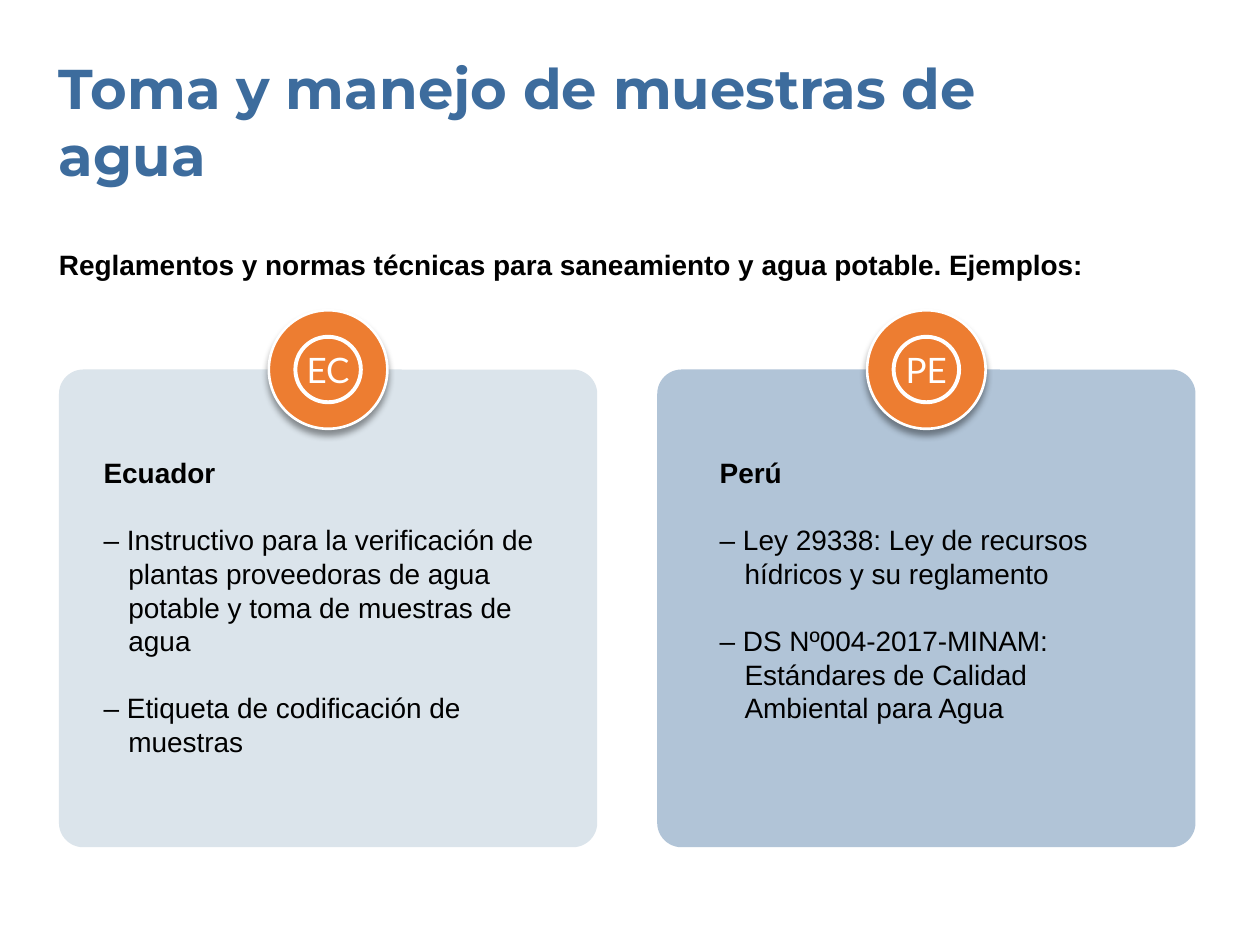
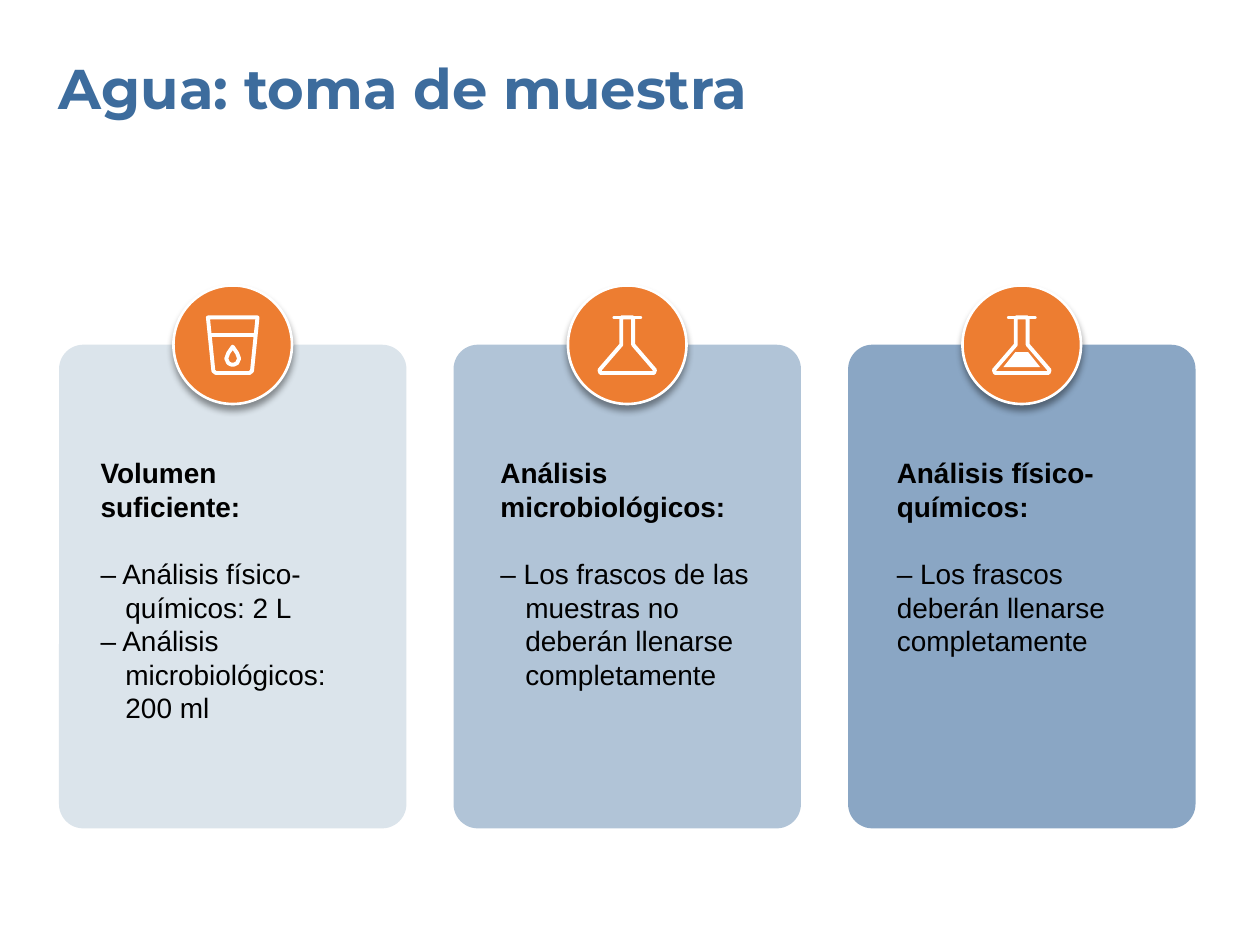
from dataclasses import dataclass

from lxml import etree
from pptx import Presentation
from pptx.dml.color import RGBColor
from pptx.enum.shapes import MSO_CONNECTOR, MSO_SHAPE
from pptx.enum.text import MSO_ANCHOR, PP_ALIGN
from pptx.oxml.ns import qn
from pptx.util import Cm, Pt

ROUNDED, OVAL = MSO_SHAPE.ROUNDED_RECTANGLE, MSO_SHAPE.OVAL
STRAIGHT = MSO_CONNECTOR.STRAIGHT
TOP, MIDDLE = MSO_ANCHOR.TOP, MSO_ANCHOR.MIDDLE
LEFT, CENTER = PP_ALIGN.LEFT, PP_ALIGN.CENTER


@dataclass(frozen=True)
class Theme:
    blue: str = "3D6C9D"
    pale: str = "DBE4EB"
    orange: str = "ED7D31"
    white: str = "FFFFFF"
    black: str = "000000"
    title_font: str = "Montserrat"
    body_font: str = "Arial"
    badge_font: str = "Lato"
    title_size: int = 32
    body_size: int = 16
    badge_size: int = 20
    icon_line: float = 2.25
    leading: float = 1.2


THEME = Theme()

# Shared layout, in centimetres
MARGIN = 1.19
CONTENT_WIDTH = 22.91
BADGE = 2.39
RING = 1.32
CORNER = 0.49
TEXT_TOP = 9.19
HANGING = 0.5

# Card fills from light to dark: colour and opacity in percent
CARD_FILLS = [(THEME.pale, 100), (THEME.blue, 40), (THEME.blue, 60)]


# Formatting helpers
def add_alpha(color_element, percent):
    etree.SubElement(color_element, qn("a:alpha"), val=str(percent * 1000))


def paint(shape, fill=None, line=None, width=1.5, opacity=100):
    shape.shadow.inherit = False
    if fill:
        shape.fill.solid()
        shape.fill.fore_color.rgb = RGBColor.from_string(fill)
        if opacity < 100:
            add_alpha(shape.fill._xPr.find(f".//{qn('a:srgbClr')}"), opacity)
    else:
        shape.fill.background()
    if line:
        shape.line.color.rgb = RGBColor.from_string(line)
        shape.line.width = Pt(width)
    else:
        shape.line.fill.background()


def drop_shadow(shape):
    effects = shape._element.spPr.find(qn("a:effectLst"))
    shadow = etree.SubElement(
        effects, qn("a:outerShdw"), blurRad=str(Pt(4)), dist=str(Pt(3)),
        dir="5400000", algn="t", rotWithShape="0")
    add_alpha(etree.SubElement(shadow, qn("a:srgbClr"), val=THEME.black), 40)


def round_line(shape):
    line = shape.line._get_or_add_ln()
    line.set("cap", "rnd")
    etree.SubElement(line, qn("a:round"))


def write(frame, text, font=THEME.body_font, size=THEME.body_size,
          color=THEME.black, bold=False, align=LEFT, hanging=0, gap=False,
          exact=True):
    """Add one paragraph; gap leaves one line free above it."""
    para = frame.paragraphs[0]
    if para.runs:
        para = frame.add_paragraph()
    para.alignment = align
    if exact:
        para.line_spacing = Pt(size * THEME.leading)
    if gap:
        para.space_before = Pt(size * THEME.leading)
    if hanging:
        properties = para._p.get_or_add_pPr()
        properties.set("marL", str(Cm(hanging)))
        properties.set("indent", str(-Cm(hanging)))
    span = para.add_run()
    span.text = text
    span.font.name = font
    span.font.size = Pt(size)
    span.font.bold = bold
    span.font.color.rgb = RGBColor.from_string(color)


def clear_insets(frame):
    frame.margin_left = frame.margin_right = 0
    frame.margin_top = frame.margin_bottom = 0


def add_text_box(page, left, top, width, height):
    frame = page.shapes.add_textbox(
        Cm(left), Cm(top), Cm(width), Cm(height)).text_frame
    frame.word_wrap = True
    frame.vertical_anchor = TOP
    clear_insets(frame)
    return frame


# Slide parts
def add_page(deck, title):
    page = deck.slides.add_slide(deck.slide_layouts[6])
    frame = add_text_box(page, MARGIN, 1.07, 21.72, 2.74)
    write(frame, title, font=THEME.title_font, size=THEME.title_size,
          color=THEME.blue, bold=True)
    return page


def add_circle(page, x, y, diameter):
    return page.shapes.add_shape(
        OVAL, Cm(x - diameter / 2), Cm(y - diameter / 2),
        Cm(diameter), Cm(diameter))


def add_badge(page, x, y, icon):
    badge = add_circle(page, x, y, BADGE)
    paint(badge, THEME.orange, THEME.white)
    drop_shadow(badge)
    if callable(icon):
        icon(page, x, y)
        return
    frame = badge.text_frame
    frame.word_wrap = False
    frame.vertical_anchor = MIDDLE
    write(frame, icon, font=THEME.badge_font, size=THEME.badge_size,
          color=THEME.white, align=CENTER, exact=False)
    paint(add_circle(page, x, y, RING), line=THEME.white,
          width=THEME.icon_line)


def add_cards(page, cards, top, height, gutter):
    """Spread equal cards over the content width."""
    width = (CONTENT_WIDTH - gutter * (len(cards) - 1)) / len(cards)
    for index, (card, (fill, opacity)) in enumerate(zip(cards, CARD_FILLS)):
        left = MARGIN + index * (width + gutter)
        panel = page.shapes.add_shape(
            ROUNDED, Cm(left), Cm(top), Cm(width), Cm(height))
        panel.adjustments[0] = CORNER / min(width, height)
        paint(panel, fill, opacity=opacity)
        add_badge(page, left + width / 2, top, card["icon"])

        frame = add_text_box(page, card["left"], TEXT_TOP, card["width"], 6)
        for heading in card["headings"]:
            write(frame, heading, bold=True)
        for number, item in enumerate(card["items"]):
            write(frame, f"– {item}", hanging=card.get("hanging", HANGING),
                  gap=number == 0 or card.get("spaced", False))


# Icons, drawn around their centre
def add_outline(page, x, y, points, filled=False):
    placed = [(Cm(x + dx), Cm(y + dy)) for dx, dy in points]
    builder = page.shapes.build_freeform(*placed[0])
    builder.add_line_segments(placed[1:], close=True)
    outline = builder.convert_to_shape()
    if filled:
        paint(outline, THEME.white)
    else:
        paint(outline, line=THEME.white, width=THEME.icon_line)
        round_line(outline)


def mirrored(half):
    """Complete a right-hand profile with its left-hand reflection."""
    return half + [(-dx, dy) for dx, dy in reversed(half)]


def add_stroke(page, x, y, half_width):
    stroke = page.shapes.add_connector(
        STRAIGHT, Cm(x - half_width), Cm(y), Cm(x + half_width), Cm(y))
    stroke.line.color.rgb = RGBColor.from_string(THEME.white)
    stroke.line.width = Pt(THEME.icon_line)
    round_line(stroke)
    etree.SubElement(stroke._element.spPr, qn("a:effectLst"))


def draw_glass(page, x, y):
    add_outline(page, x, y, mirrored([(0.5, -0.55), (0.39, 0.53), (0.34, 0.57)]))
    add_stroke(page, x, y - 0.19, 0.45)
    add_outline(page, x, y, mirrored(
        [(0, 0.04), (0.09, 0.17), (0.13, 0.28), (0.09, 0.37), (0.03, 0.4)]))


def draw_flask(page, x, y):
    add_outline(page, x, y, mirrored(
        [(0.12, -0.55), (0.12, 0), (0.56, 0.51), (0.54, 0.57)]))
    add_stroke(page, x, y - 0.55, 0.26)


def draw_filled_flask(page, x, y):
    draw_flask(page, x, y)
    add_outline(page, x, y, mirrored([(0.13, 0.15), (0.37, 0.45)]), filled=True)


# Slides
def build_regulations(deck):
    page = add_page(deck, "Toma y manejo de muestras de agua")
    frame = add_text_box(page, MARGIN, 5, CONTENT_WIDTH, 0.69)
    write(frame, "Reglamentos y normas técnicas para saneamiento y agua "
          "potable. Ejemplos:", bold=True)
    countries = [
        dict(icon="EC", left=2.09, width=9.17, headings=["Ecuador"],
             spaced=True, items=[
                 "Instructivo para la verificación de plantas proveedoras de "
                 "agua potable y toma de muestras de agua",
                 "Etiqueta de codificación de muestras"]),
        dict(icon="PE", left=14.51, width=8.79, headings=["Perú"],
             spaced=True, items=[
                 "Ley 29338: Ley de recursos hídricos y su reglamento",
                 "DS Nº004-2017-MINAM: Estándares de Calidad Ambiental "
                 "para Agua"]),
    ]
    add_cards(page, countries, top=7.45, height=9.63, gutter=1.21)


def build_sampling(deck):
    page = add_page(deck, "Agua: toma de muestra")
    samples = [
        dict(icon=draw_glass, left=2.03, width=5.51,
             headings=["Volumen", "suficiente:"],
             items=["Análisis físico-químicos: 2 L",
                    "Análisis microbiológicos: 200 ml"]),
        dict(icon=draw_flask, left=10.09, width=5.28,
             headings=["Análisis microbiológicos:"],
             items=["Los frascos de las muestras no deberán llenarse "
                    "completamente"]),
        dict(icon=draw_filled_flask, left=18.08, width=5.41, hanging=0,
             headings=["Análisis físico-químicos:"],
             items=["Los frascos deberán llenarse completamente"]),
    ]
    add_cards(page, samples, top=6.95, height=9.75, gutter=0.95)


def main():
    deck = Presentation()
    deck.slide_width, deck.slide_height = Cm(25.4), Cm(19.05)
    build_regulations(deck)
    build_sampling(deck)
    deck.save("out.pptx")


if __name__ == "__main__":
    main()
